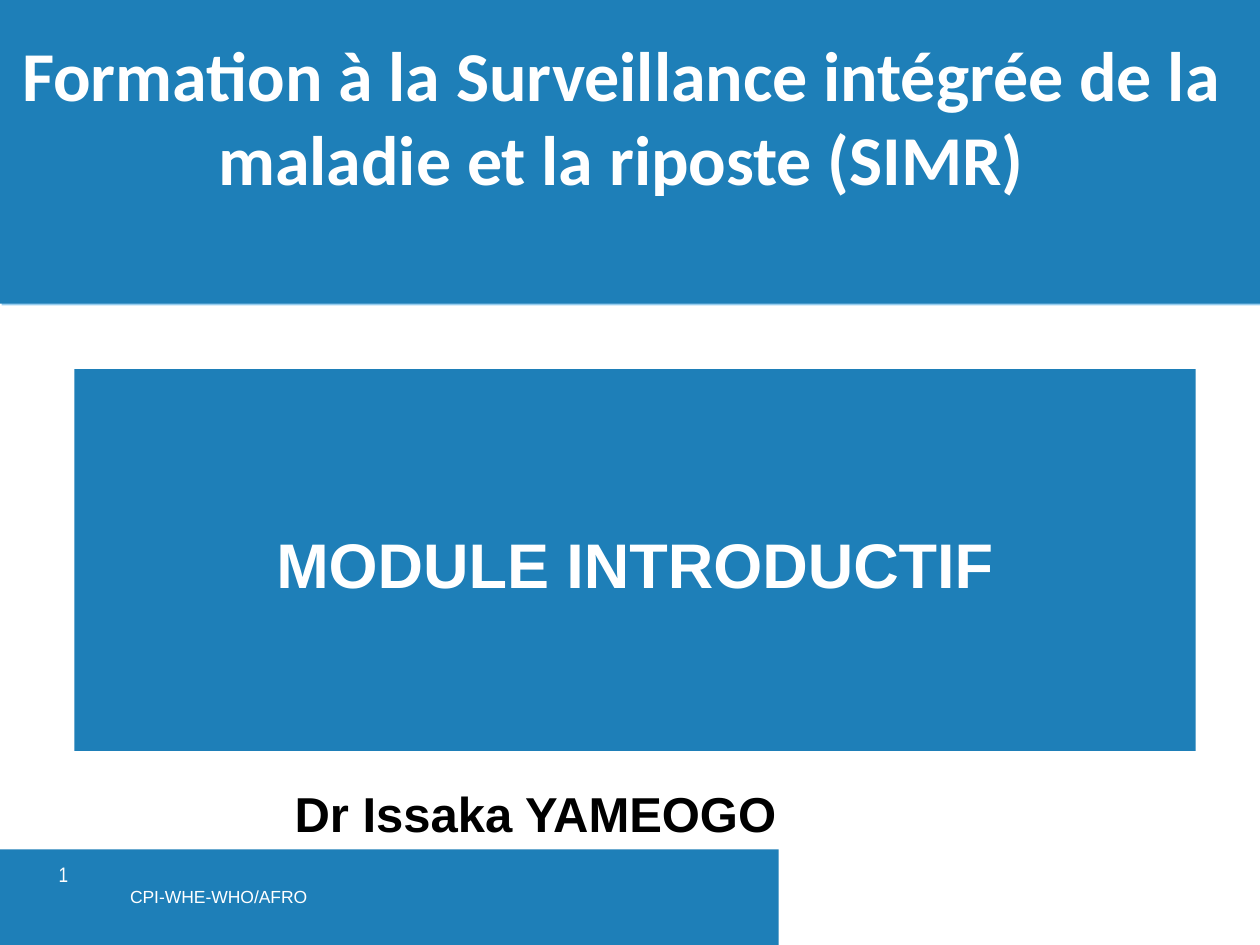
import pptx
import pptx.util
import pptx.dml.color
import pptx.enum.shapes
import pptx.enum.text
import pptx.oxml

BLUE, WHITE, BLACK = "1E7FB8", "FFFFFF", "000000"
ALIGN = pptx.enum.text.PP_ALIGN
ANCHOR = pptx.enum.text.MSO_ANCHOR
inches = pptx.util.Inches


def paint(color_format, color):
    color_format.rgb = pptx.dml.color.RGBColor.from_string(color)


def write(box, lines, size, font, color, bold=False, align=ALIGN.CENTER,
          anchor=ANCHOR.MIDDLE, insets=(0.1, 0.05, 0.1, 0.05), wrap=True):
    frame = box.text_frame
    frame.auto_size = pptx.enum.text.MSO_AUTO_SIZE.NONE
    frame.word_wrap = wrap
    frame.vertical_anchor = anchor
    frame.margin_left, frame.margin_top, frame.margin_right, frame.margin_bottom = map(inches, insets)
    para = frame.paragraphs[0]
    para.alignment = align
    for number, line in enumerate(lines):
        if number:
            para.add_line_break()
        span = para.add_run()
        span.text = line
        span.font.size = pptx.util.Pt(size)
        span.font.name = font
        span.font.bold = bold
        paint(span.font.color, color)


deck = pptx.Presentation()
deck.slide_width, deck.slide_height = inches(10), inches(7.5)
page = deck.slides.add_slide(deck.slide_layouts[5])

# Blue footer band and module panel
panels = []
for place in [(0, 6.74, 6.18, 0.79), (0.59, 2.93, 8.9, 3.03)]:
    panel = page.shapes.add_shape(pptx.enum.shapes.MSO_SHAPE.RECTANGLE, *map(inches, place))
    panel.fill.solid()
    paint(panel.fill.fore_color, BLUE)
    panel.line.fill.background()
    panel.shadow.inherit = False
    panels.append(panel)
footer_band, module_panel = panels
write(module_panel, ["MODULE INTRODUCTIF"], 36, "Arial", WHITE, bold=True, insets=(0, 0.06, 0, 0))

# Title band across the top, with a thin light shadow
title = page.shapes.title
title.left, title.top, title.width, title.height = map(inches, (0, 0, 10, 2.41))
title.fill.solid()
paint(title.fill.fore_color, BLUE)
write(title, ["Formation à la Surveillance intégrée de la", "maladie et la riposte (SIMR)"],
      40, "Calibri", WHITE, bold=True, insets=(0, 0, 0.14, 0.58))
title._element.spPr.append(pptx.oxml.parse_xml(
    '<a:effectLst xmlns:a="http://schemas.openxmlformats.org/drawingml/2006/main">'
    '<a:outerShdw dist="17780" dir="2700000"><a:srgbClr val="96CCEE"/></a:outerShdw>'
    '</a:effectLst>'))

# Page number, footer and presenter
number_box = page.shapes.add_textbox(*map(inches, (0.19, 6.74, 0.45, 0.4)))
write(number_box, ["1"], 12, "Arial Narrow", WHITE, align=ALIGN.RIGHT)
footer_box = page.shapes.add_textbox(*map(inches, (0.76, 6.73, 1.95, 0.77)))
write(footer_box, ["CPI-WHE-WHO/AFRO"], 10, "Arial", WHITE)
presenter_box = page.shapes.add_textbox(*map(inches, (2.24, 6.17, 4.07, 0.57)))
write(presenter_box, ["Dr Issaka YAMEOGO"], 28, "Arial", BLACK, bold=True,
      align=ALIGN.LEFT, anchor=ANCHOR.TOP, wrap=False)

deck.save("out.pptx")
